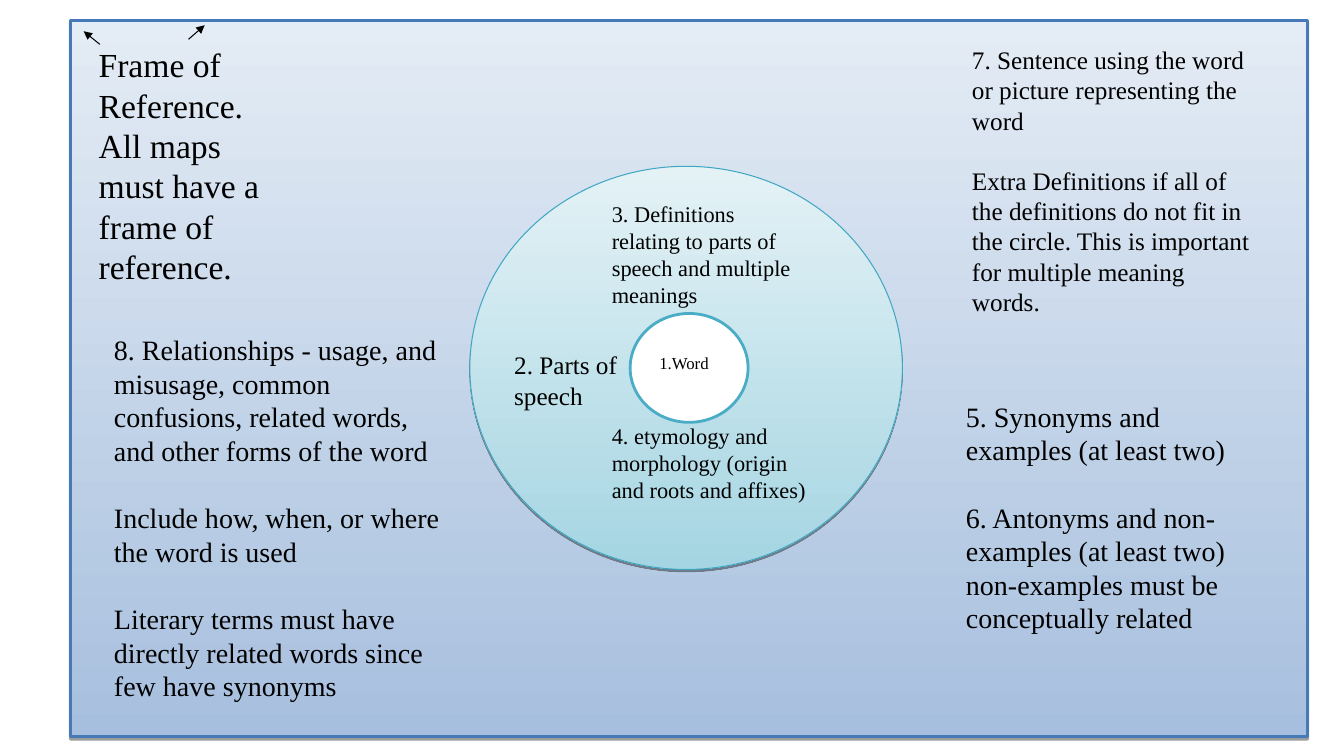
from pptx import Presentation
from pptx.util import Inches, Pt
from pptx.dml.color import RGBColor
from pptx.enum.shapes import MSO_SHAPE as Geo, MSO_CONNECTOR as Link
from pptx.oxml import parse_xml
from pptx.oxml.ns import nsdecls, qn
from lxml.etree import SubElement as Sub


def tint(color, code):
    color.rgb = RGBColor.from_string(code)


def write(box, size, texts, inset=True, gap=0):
    left, top, width, height = map(Inches, box)
    frame = slide.shapes.add_textbox(left, top, width, height).text_frame
    frame.word_wrap = True
    if not inset:
        frame.margin_left = frame.margin_right = 0
        frame.margin_top = frame.margin_bottom = 0
    for i, text in enumerate(texts):
        para = frame.paragraphs[0] if i == 0 else frame.add_paragraph()
        para.text = text.lstrip("+")
        para.font.size = Pt(size)
        para.font.name = "Times New Roman"
        tint(para.font.color, "000000")
        if text.startswith("+"):
            para.space_before = Pt(gap)
    return frame


deck = Presentation()
deck.slide_width, deck.slide_height = Inches(13.33), Inches(7.5)
slide = deck.slides.add_slide(deck.slide_layouts[6])

areas = [
    (Geo.RECTANGLE, (0.7, 0.2, 12.27, 7.11), ["E4ECF5", "A7BFDE"], "4579B8", 2.25),
    (Geo.OVAL, (4.66, 1.65, 4.29, 4), ["E4F2F6", "A5D5E2"], "40A7C2", 0.75),
    (Geo.OVAL, (6.25, 3.11, 1.17, 1.08), ["FFFFFF"], "4BACC6", 2),
]
for geo, box, fills, edge, weight in areas:
    area = slide.shapes.add_shape(geo, *map(Inches, box))
    area.shadow.inherit = False
    tint(area.line.color, edge)
    area.line.width = Pt(weight)
    if len(fills) == 1:
        area.fill.solid()
        tint(area.fill.fore_color, fills[0])
        continue
    area.fill.gradient()
    area.fill.gradient_angle = 270
    for stop, code in zip(area.fill.gradient_stops, fills):
        tint(stop.color, code)
    area.element.spPr.find(qn("a:effectLst")).append(parse_xml(
        f'<a:outerShdw {nsdecls("a")} blurRad="0" dist="20000" dir="5400000" rotWithShape="0">'
        '<a:srgbClr val="000000"><a:alpha val="38000"/></a:srgbClr></a:outerShdw>'))

write((0.88, 0.39, 1.85, 0.85), 24,
      ["Frame of Reference. All maps must have a frame of reference."])

word = write((6.44, 3.45, 1.12, 0.33), 12, ["Word"])
props = word.paragraphs[0]._p.get_or_add_pPr()
number = Sub(props, qn("a:buAutoNum"), type="arabicPeriod")
props.insert(0, number)

write((5.97, 1.94, 2.1, 0.78), 16,
      ["3. Definitions relating to parts of speech and multiple meanings"])
write((5.97, 4.14, 2.24, 0.87), 16,
      ["4. etymology and morphology (origin and roots and affixes)"])
write((5.1, 3.47, 1.07, 0.62), 18, ["2. Parts of speech"], False)
write((1.13, 3.3, 3.28, 3.05), 20, [
    "8. Relationships - usage, and misusage, common confusions, "
    "related words, and other forms of the word",
    "+Include how, when, or where the word is used",
    "+Literary terms must have directly related words since few have synonyms",
], False, 24)
write((9.58, 3.96, 2.66, 2.12), 20, [
    "5. Synonyms and \vexamples (at least two)",
    "+6. Antonyms and non-examples (at least two)",
    "non-examples must be conceptually related",
], False, 24)
write((9.64, 0.44, 2.78, 3.03), 18, [
    "7. Sentence using the word or picture representing the word",
    "+Extra Definitions if all of the definitions do not fit in the circle. "
    "This is important for multiple meaning words.",
], False, 21.6)

for ends in [(1.87, 0.39, 2.03, 0.25), (0.99, 0.44, 0.83, 0.31)]:
    arrow = slide.shapes.add_connector(Link.STRAIGHT, *map(Inches, ends))
    tint(arrow.line.color, "000000")
    arrow.line.width = Pt(0.75)
    Sub(arrow.line._get_or_add_ln(), qn("a:tailEnd"), type="triangle")
    Sub(arrow._element.spPr, qn("a:effectLst"))

deck.save("out.pptx")
